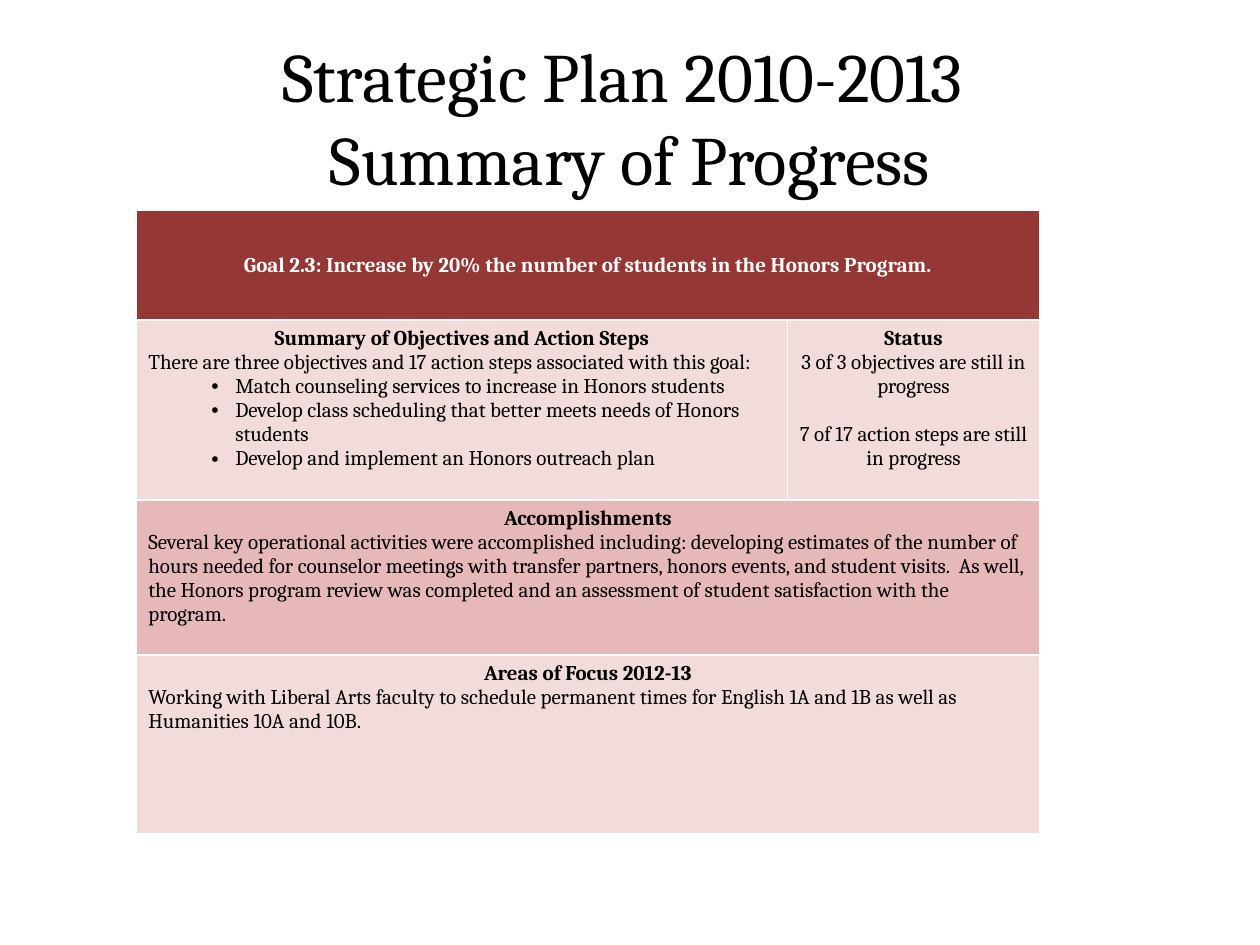
from lxml.etree import SubElement
from pptx import Presentation
from pptx.dml.color import RGBColor
from pptx.enum.text import MSO_ANCHOR, MSO_AUTO_SIZE, PP_ALIGN
from pptx.oxml.ns import qn
from pptx.util import Pt

BLACK = RGBColor(0x00, 0x00, 0x00)
WHITE = RGBColor(0xFF, 0xFF, 0xFF)
RED = RGBColor(0x95, 0x37, 0x35)
PALE = RGBColor(0xF2, 0xDC, 0xDB)
PINK = RGBColor(0xE6, 0xB9, 0xB8)
FACE = "Cambria"

# Content: each paragraph is (text, format)
HEAD = {"bold": True, "align": PP_ALIGN.CENTER}
MID = {"align": PP_ALIGN.CENTER}
DOT = {"bullet": True}
TITLE = "Strategic Plan 2010-2013 \vSummary of Progress"
GOAL = [("Goal 2.3: Increase by 20% the number of students in the Honors Program.",
         {**HEAD, "color": WHITE})]
STEPS = [
    ("Summary of Objectives and Action Steps", HEAD),
    ("There are three objectives and 17 action steps associated with this goal:", {}),
    ("Match counseling services to increase in Honors students", DOT),
    ("Develop class scheduling that better meets needs of Honors students", DOT),
    ("Develop and implement an Honors outreach plan", DOT),
]
STATUS = [
    ("Status", HEAD),
    ("3 of 3 objectives are still in progress", MID),
    ("7 of 17 action steps are still in progress", {**MID, "before": 13.8}),
]
DONE = [
    ("Accomplishments", HEAD),
    ("Several key operational activities were accomplished including: developing "
     "estimates of the number of hours needed for counselor meetings with transfer "
     "partners, honors events, and student visits.  As well, the Honors program "
     "review was completed and an assessment of student satisfaction with the "
     "program.", {}),
]
FOCUS = [
    ("Areas of Focus 2012-13", HEAD),
    ("Working with Liberal Arts faculty to schedule permanent times for English 1A "
     "and 1B as well as Humanities 10A and 10B.", {}),
]

# Rows: height, fill, cells (a single cell spans the row)
ROWS = [
    (62.4, RED, [GOAL]),
    (103, PALE, [STEPS, STATUS]),
    (88.6, PINK, [DONE]),
    (102.2, PALE, [FOCUS]),
]
COLS = [372, 144]
LEFT, TOP = 78, 120.4


def write(para, text, size=12, bold=False, color=BLACK, align=PP_ALIGN.LEFT,
          before=0, bullet=False):
    if bullet:
        props = para._p.get_or_add_pPr()
        props.set("marL", str(Pt(49.7)))
        props.set("indent", str(-Pt(13.7)))
        SubElement(props, qn("a:buFont"), typeface="Arial")
        SubElement(props, qn("a:buChar"), char="•")
    para.text = text
    para.alignment = align
    if before:
        para.space_before = Pt(before)
    for run in para.runs:
        font = run.font
        font.name, font.size, font.bold = FACE, Pt(size), bold
        font.color.rgb = color


deck = Presentation()
deck.slide_width, deck.slide_height = Pt(720), Pt(540)
slide = deck.slides.add_slide(deck.slide_layouts[5])

# Title
title = slide.shapes.title
title.left, title.top, title.width, title.height = Pt(36), Pt(21.6), Pt(648), Pt(90)
frame = title.text_frame
frame.auto_size = MSO_AUTO_SIZE.NONE
frame.vertical_anchor = MSO_ANCHOR.MIDDLE
write(frame.paragraphs[0], TITLE, size=39.6, align=PP_ALIGN.CENTER)

# Progress table
high = sum(row[0] for row in ROWS)
table = slide.shapes.add_table(len(ROWS), len(COLS), Pt(LEFT), Pt(TOP),
                               Pt(sum(COLS)), Pt(high)).table
for col, width in zip(table.columns, COLS):
    col.width = Pt(width)
for i, (height, fill, cells) in enumerate(ROWS):
    table.rows[i].height = Pt(height)
    if len(cells) == 1:
        table.cell(i, 0).merge(table.cell(i, len(COLS) - 1))
    for j, paras in enumerate(cells):
        cell = table.cell(i, j)
        cell.fill.solid()
        cell.fill.fore_color.rgb = fill
        cell.margin_left = cell.margin_right = Pt(6.8)
        cell.vertical_anchor = MSO_ANCHOR.TOP if i else MSO_ANCHOR.MIDDLE
        for k, (text, style) in enumerate(paras):
            body = cell.text_frame
            write(body.add_paragraph() if k else body.paragraphs[0], text, **style)

deck.save("out.pptx")
